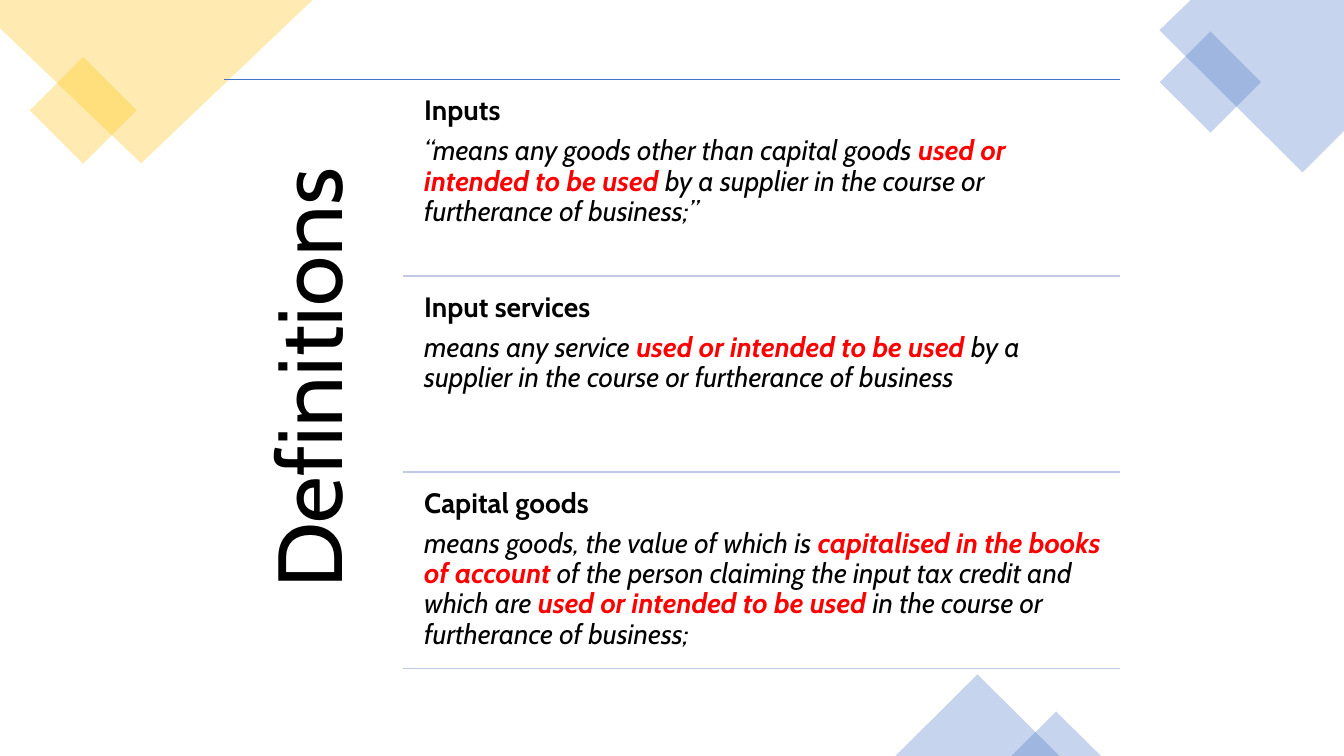
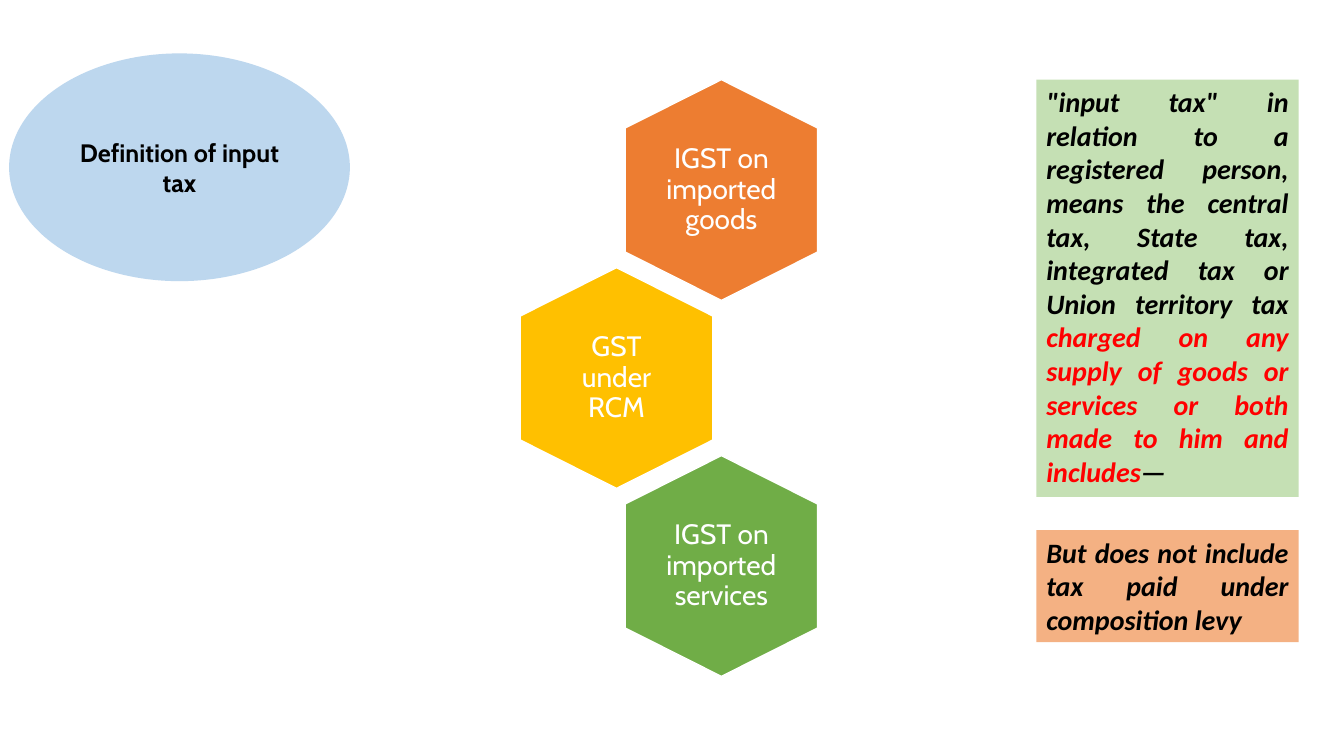
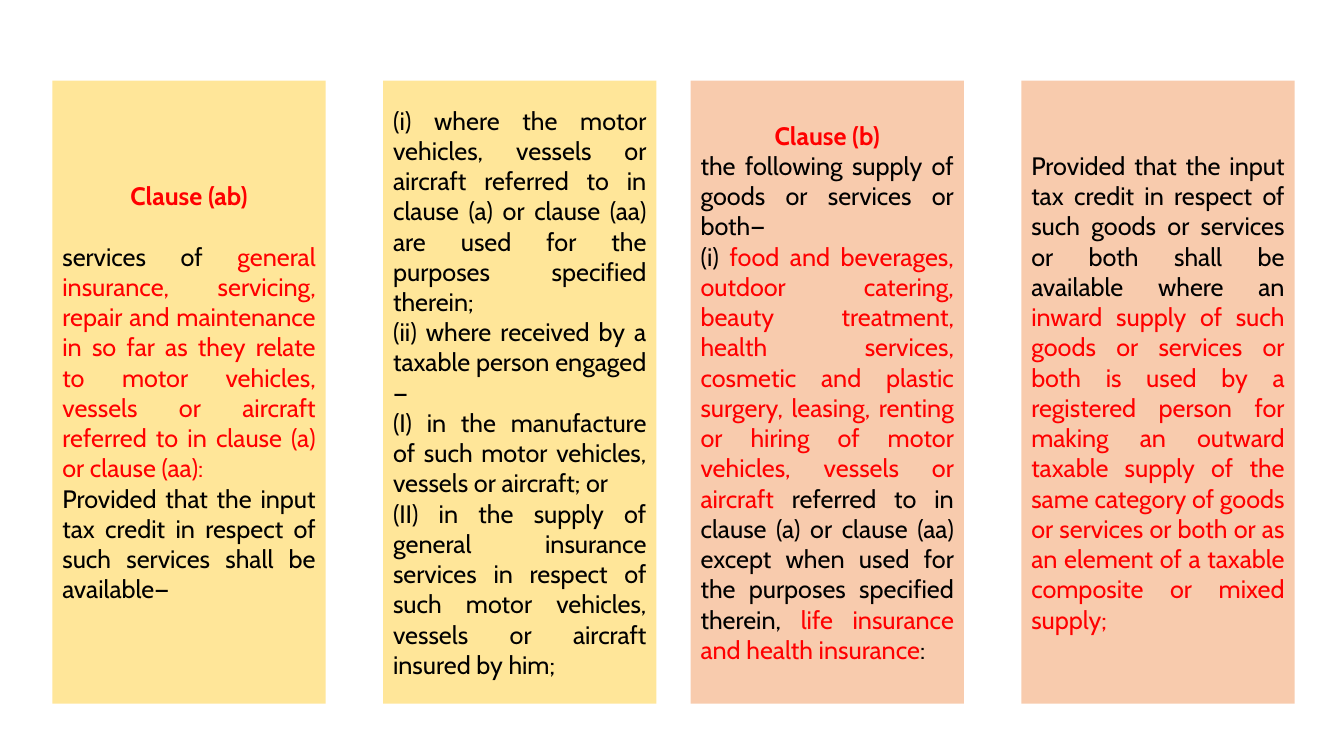
from dataclasses import dataclass
from lxml import etree
from pptx import Presentation
from pptx.dml.color import RGBColor
from pptx.enum.shapes import MSO_CONNECTOR, MSO_SHAPE
from pptx.enum.text import MSO_ANCHOR, MSO_AUTO_SIZE, PP_ALIGN
from pptx.oxml.ns import qn
from pptx.util import Inches, Pt

RECT, OVAL = MSO_SHAPE.RECTANGLE, MSO_SHAPE.OVAL
PEAK = MSO_SHAPE.ISOSCELES_TRIANGLE
LINE = MSO_CONNECTOR.STRAIGHT
TOP, MID = MSO_ANCHOR.TOP, MSO_ANCHOR.MIDDLE
LEFT, CENTER, JUST = PP_ALIGN.LEFT, PP_ALIGN.CENTER, PP_ALIGN.JUSTIFY
GROW = MSO_AUTO_SIZE.SHAPE_TO_FIT_TEXT


@dataclass(frozen=True)
class Theme:
    font: str = "Cabin"
    alt: str = "Calibri"
    black: str = "000000"
    white: str = "FFFFFF"
    red: str = "FF0000"
    gold: str = "FFC000"
    blue: str = "4472C4"
    rule: str = "C1C9E4"
    orange: str = "ED7D31"
    green: str = "70AD47"
    mint: str = "C5E0B4"
    peach: str = "F4B183"
    sky: str = "BDD7EE"
    cream: str = "FFE699"
    blush: str = "F8CBAD"
    huge: int = 65
    large: int = 20
    body: int = 18
    tint: int = 30


@dataclass(frozen=True)
class Para:
    """A paragraph; text between bars is shown in red."""
    text: str
    align: PP_ALIGN = LEFT
    bold: bool = False
    italic: bool = False
    strong: bool = False  # red words are bold
    after: float = 0
    line: float = 1.0


T = Theme()


# Shared drawing helpers
def paint(shape, fill, alpha=None, edge=None):
    shape.shadow.inherit = False
    shape.fill.solid()
    shape.fill.fore_color.rgb = RGBColor.from_string(fill)
    if alpha:
        tone = shape.element.spPr.find(qn("a:solidFill"))[0]
        etree.SubElement(tone, qn("a:alpha")).set("val", str(alpha * 1000))
    if edge:
        shape.line.color.rgb = RGBColor.from_string(edge)
        shape.line.width = Pt(1)
    else:
        shape.line.fill.background()
    return shape


def block(slide, kind, box, fill, alpha=None, turn=0):
    shape = slide.shapes.add_shape(kind, *map(Inches, box))
    shape.rotation = turn
    return paint(shape, fill, alpha)


def outline(slide, points, fill, alpha=None, edge=None):
    spots = [(Inches(x), Inches(y)) for x, y in points]
    path = slide.shapes.build_freeform(*spots[0])
    path.add_line_segments(spots[1:], close=True)
    return paint(path.convert_to_shape(), fill, alpha, edge)


def rule(slide, left, right, y, color):
    line = slide.shapes.add_connector(
        LINE, Inches(left), Inches(y), Inches(right), Inches(y))
    line.line.color.rgb = RGBColor.from_string(color)
    line.line.width = Pt(1)
    etree.SubElement(line.element.spPr, qn("a:effectLst"))


def write(shape, paras, size, font=T.font, color=T.black,
          inset=(0.1, 0.05), anchor=MID):
    frame = shape.text_frame
    frame.word_wrap = True
    frame.vertical_anchor = anchor
    frame.margin_left = frame.margin_right = Inches(inset[0])
    frame.margin_top = frame.margin_bottom = Inches(inset[1])
    for i, para in enumerate(paras):
        line = frame.add_paragraph() if i else frame.paragraphs[0]
        line.alignment = para.align
        line.line_spacing = para.line
        line.space_after = Pt(para.after)
        for j, part in enumerate(para.text.split("|")):
            if not part:
                continue
            run = line.add_run()
            run.text = part
            look = run.font
            look.name, look.size = font, Pt(size)
            look.bold = para.bold or (para.strong and j % 2 == 1)
            look.italic = para.italic
            look.color.rgb = RGBColor.from_string(T.red if j % 2 else color)


def label(slide, box):
    return slide.shapes.add_textbox(*map(Inches, box))


# Slide 1: definitions
def corners(slide):
    block(slide, RECT, (0.45, 0.72, 0.75, 0.75), T.gold, T.tint, 45)
    outline(slide, [(0, 0), (3.1, 0), (1.4, 1.62), (0, 0.28)], T.gold, T.tint)
    outline(slide, [(11.81, 0), (13.33, 0), (13.33, 1.3), (12.92, 1.71),
                    (11.5, 0.3)], T.blue, T.tint)
    block(slide, RECT, (11.65, 0.46, 0.71, 0.71), T.blue, T.tint, 45)
    block(slide, PEAK, (8.88, 6.69, 1.63, 0.81), T.blue, T.tint)
    block(slide, PEAK, (10.03, 7.06, 0.89, 0.44), T.blue, T.tint)


def terms(slide, box, title, rows):
    left, top, width, height = box
    side, pad, right = width / 5, 0.09, left + width
    rule(slide, left, right, top, T.blue)
    # Upright title
    head = label(slide, (left, top, side, height))
    write(head, [Para(title, CENTER, line=0.9)], T.huge, inset=(0.27, 0.27))
    head.element.txBody.bodyPr.set("vert", "vert270")
    # One row for each term
    step = (height - pad) / len(rows)
    start = left + side
    for i, (name, text) in enumerate(rows):
        y = top + pad + i * step
        cell = label(slide, (start + 0.13, y, right - start - 0.13, step - pad))
        write(cell, [Para(name, bold=True, after=7, line=0.9),
                     Para(text, italic=True, strong=True, line=0.9)],
              T.large, inset=(0.08, 0.08), anchor=TOP)
        rule(slide, start, right, y + step - pad, T.rule)


# Slide 2: input tax
def hive(slide, box, items):
    left, top, width, height = box
    for i, (text, fill) in enumerate(items):
        x = left + (0 if i % 2 else 1.04)
        y = top + i * 1.865
        mid, right, low = x + width / 2, x + width, y + height
        cell = outline(slide, [
            (mid, y), (right, y + 0.48), (right, low - 0.48),
            (mid, low), (x, low - 0.48), (x, y + 0.48)], fill, edge=T.white)
        write(cell, [Para(text, CENTER, line=0.9)], T.large,
              color=T.white, inset=(0.38, 0.43))


def note(slide, box, fill, text):
    shape = block(slide, RECT, box, fill)
    write(shape, [Para(text, JUST, bold=True, italic=True)], T.large,
          font=T.alt, anchor=TOP)
    shape.text_frame.auto_size = GROW


def badge(slide, box, text):
    shape = block(slide, OVAL, box, T.sky)
    write(shape, [Para(text, CENTER, bold=True)], T.body)


# Slide 3: clauses
def pair(slide, box, fill, cards):
    left, top, width, height = box
    for i, paras in enumerate(cards):
        card = block(slide, RECT, (left + i * 3.28, top, width, height), fill)
        write(card, paras, T.body)


def main():
    deck = Presentation()
    deck.slide_width, deck.slide_height = Inches(13.33), Inches(7.5)
    first, second, third = (
        deck.slides.add_slide(deck.slide_layouts[6]) for _ in range(3))

    corners(first)
    terms(first, (2.22, 0.79, 8.89, 5.93), "Definitions", [
        ("Inputs",
         "“means any goods other than capital goods |used or intended to be "
         "used |by a supplier in the course or furtherance of business;”"),
        ("Input services",
         "means any service |used or intended to be used |by a supplier in "
         "the course or furtherance of business"),
        ("Capital goods",
         "means goods, the value of which is |capitalised in the books of "
         "account |of the person claiming the input tax credit and which are "
         "|used or intended to be used |in the course or furtherance of "
         "business;"),
    ])

    hive(second, (5.16, 0.79, 1.91, 2.19), [
        ("IGST on imported goods", T.orange),
        ("GST under RCM", T.gold),
        ("IGST on imported services", T.green),
    ])
    note(second, (10.28, 0.79, 2.6, 4.14), T.mint,
         '"input tax" in relation to a registered person, means the central '
         "tax, State tax, integrated tax or Union territory tax |charged on "
         "any supply of goods or services or both made to him and includes|—")
    note(second, (10.28, 5.26, 2.6, 1.11), T.peach,
         "But does not include tax paid under composition levy")
    badge(second, (0.09, 0.53, 3.38, 2.26), "Definition of input tax")

    pair(third, (0.52, 0.8, 2.71, 6.18), T.cream, [
        [Para("|Clause (ab)|", CENTER, bold=True, after=21.6),
         Para("services of |general insurance, servicing, repair and "
              "maintenance in so far as they relate to motor vehicles, "
              "vessels or aircraft referred to in clause (a) or clause "
              "(aa):|", JUST),
         Para("Provided that the input tax credit in respect of such "
              "services shall be available—", JUST)],
        [Para("(i) where the motor vehicles, vessels or aircraft referred to "
              "in clause (a) or clause (aa) are used for the purposes "
              "specified therein;", JUST),
         Para("(ii) where received by a taxable person engaged—", JUST),
         Para("(I) in the manufacture of such motor vehicles, vessels or "
              "aircraft; or", JUST),
         Para("(II) in the supply of general insurance services in respect "
              "of such motor vehicles, vessels or aircraft insured by him;",
              JUST)],
    ])
    pair(third, (6.85, 0.8, 2.71, 6.18), T.blush, [
        [Para("|Clause (b)|", CENTER, bold=True),
         Para("the following supply of goods or services or both—", JUST),
         Para("(i) |food and beverages, outdoor catering, beauty treatment, "
              "health services, cosmetic and plastic surgery, leasing, "
              "renting or hiring of motor vehicles, vessels or aircraft| "
              "referred to in clause (a) or clause (aa) except when used for "
              "the purposes specified therein, |life insurance and health "
              "insurance|:", JUST)],
        [Para("Provided that the input tax credit in respect of such goods "
              "or services or both shall be available where an |inward "
              "supply of such goods or services or both is used by a "
              "registered person for making an outward taxable supply of the "
              "same category of goods or services or both or as an element "
              "of a taxable composite or mixed supply;|", JUST)],
    ])
    deck.save("out.pptx")


if __name__ == "__main__":
    main()
